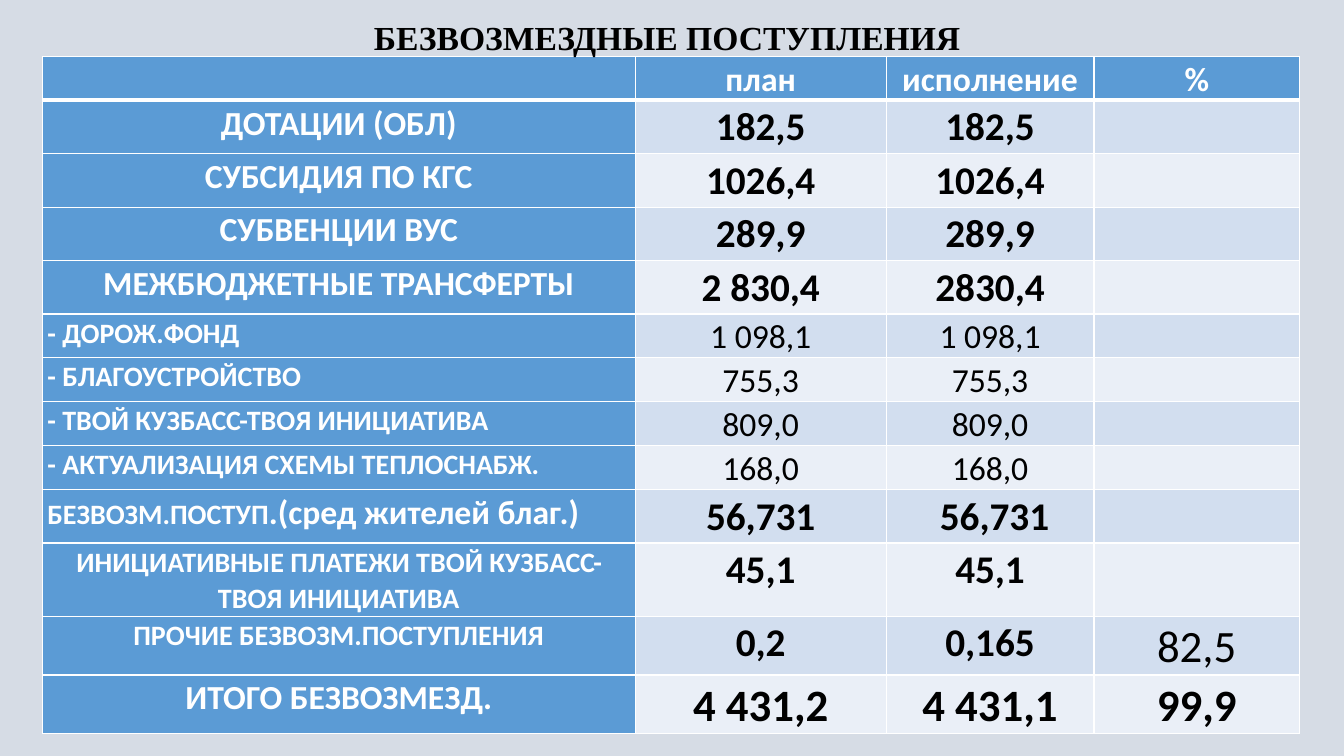
"""Build a slide with a table of gratuitous budget receipts."""
from lxml.etree import SubElement
from pptx import Presentation
from pptx.dml.color import RGBColor
from pptx.enum.text import MSO_ANCHOR, MSO_AUTO_SIZE, PP_ALIGN as Align
from pptx.oxml.ns import qn
from pptx.util import Inches, Pt

COLORS = {
    "background": "D6DCE5",
    "header": "5B9BD5",
    "odd": "D2DEEF",
    "even": "EAEFF7",
    "white": "FFFFFF",
    "black": "000000",
}
TITLE = "БЕЗВОЗМЕЗДНЫЕ ПОСТУПЛЕНИЯ "
HEADINGS = ["", "план", "исполнение", "%"]
GROUP = {"label_size": 24, "align": Align.CENTER, "size": 28, "bold": True}
DETAIL = {"label_size": 20, "align": Align.LEFT, "size": 24, "bold": False}
MIXED = {**GROUP, "label_size": 20, "align": Align.LEFT}
SMALL = {**GROUP, "label_size": 20}
TOTAL = {**GROUP, "size": 32}
ROWS = [
    (0.53, GROUP, ["ДОТАЦИИ (ОБЛ)", "182,5", "182,5", ""]),
    (0.53, GROUP, ["СУБСИДИЯ ПО КГС", "1026,4", "1026,4", ""]),
    (0.53, GROUP, ["СУБВЕНЦИИ ВУС", "289,9", "289,9", ""]),
    (0.53, GROUP, ["МЕЖБЮДЖЕТНЫЕ ТРАНСФЕРТЫ", "2 830,4", "2830,4", ""]),
    (0.4, DETAIL, ["- ДОРОЖ.ФОНД", "1 098,1", "1 098,1", ""]),
    (0.4, DETAIL, ["- БЛАГОУСТРОЙСТВО", "755,3", "755,3", ""]),
    (0.4, DETAIL, ["- ТВОЙ КУЗБАСС-ТВОЯ ИНИЦИАТИВА", "809,0", "809,0", ""]),
    (0.4, DETAIL, ["- АКТУАЛИЗАЦИЯ СХЕМЫ ТЕПЛОСНАБЖ.", "168,0", "168,0", ""]),
    (0.53, MIXED, ["БЕЗВОЗМ.ПОСТУП", "56,731", " 56,731", ""]),
    (0.65, SMALL, ["ИНИЦИАТИВНЫЕ ПЛАТЕЖИ ТВОЙ КУЗБАСС-ТВОЯ ИНИЦИАТИВА", "45,1", "45,1", ""]),
    (0.54, SMALL, ["ПРОЧИЕ БЕЗВОЗМ.ПОСТУПЛЕНИЯ", "0,2", "0,165", "82,5"]),
    (0.57, TOTAL, ["ИТОГО БЕЗВОЗМЕЗД.", "4 431,2", "4 431,1", "99,9"]),
]
LABEL_ENDING = (9, ".(сред жителей благ.)", 24)
OTHER_PERCENT = (11, 3, 32)
HEADER_HEIGHT = 0.38
COLUMN_WIDTHS = [5.88, 2.49, 2.06, 2.04]


def color(name):
    return RGBColor.from_string(COLORS[name])


def format_run(run, size, bold, color_name, font="Calibri"):
    run.font.size = Pt(size)
    run.font.bold = bold
    run.font.name = font
    run.font.color.rgb = color(color_name)


def add_borders(cell, top, bottom):
    properties = cell._tc.get_or_add_tcPr()
    for side, width in (("L", 1), ("R", 1), ("T", top), ("B", bottom)):
        line = SubElement(properties, qn(f"a:ln{side}"), w=str(Pt(width)))
        fill = SubElement(line, qn("a:solidFill"))
        SubElement(fill, qn("a:srgbClr"), val=COLORS["white"])


def fill_cell(cell, text, size, bold, align, text_color, fill_color):
    cell.margin_left = cell.margin_right = Inches(0.05)
    cell.margin_top = cell.margin_bottom = 0
    cell.fill.solid()
    cell.fill.fore_color.rgb = color(fill_color)
    if text:
        paragraph = cell.text_frame.paragraphs[0]
        paragraph.text = text
        paragraph.alignment = align
        paragraph.line_spacing = 1.07
        format_run(paragraph.runs[0], size, bold, text_color)


def add_receipts(slide):
    heights = [HEADER_HEIGHT] + [height for height, style, texts in ROWS]
    table = slide.shapes.add_table(
        len(heights), len(COLUMN_WIDTHS), Inches(0.42), Inches(0.56),
        Inches(sum(COLUMN_WIDTHS)), Inches(sum(heights))).table
    for column, width in zip(table.columns, COLUMN_WIDTHS):
        column.width = Inches(width)
    lines = [(GROUP, HEADINGS)] + [(style, texts) for height, style, texts in ROWS]
    for row, (style, texts) in enumerate(lines):
        table.rows[row].height = Inches(heights[row])
        for column, text in enumerate(texts):
            cell = table.cell(row, column)
            add_borders(cell, 3 if row == 1 else 1, 3 if row == 0 else 1)
            if row == 0 or column == 0:
                align = style["align"]
                fill_cell(cell, text, style["label_size"], True, align, "white", "header")
            else:
                band = "odd" if row % 2 else "even"
                fill_cell(cell, text, style["size"], style["bold"], Align.CENTER, "black", band)
    row, ending, size = LABEL_ENDING
    run = table.cell(row, 0).text_frame.paragraphs[0].add_run()
    run.text = ending
    format_run(run, size, True, "white")
    row, column, size = OTHER_PERCENT
    run = table.cell(row, column).text_frame.paragraphs[0].runs[0]
    format_run(run, size, False, "black")


def add_title(slide):
    box = slide.shapes.add_textbox(Inches(3.58), Inches(0.12), Inches(6.16), Inches(0.5))
    frame = box.text_frame
    frame.text = TITLE
    frame.word_wrap = False
    frame.auto_size = MSO_AUTO_SIZE.SHAPE_TO_FIT_TEXT
    frame.vertical_anchor = MSO_ANCHOR.MIDDLE
    paragraph = frame.paragraphs[0]
    paragraph.alignment = Align.CENTER
    format_run(paragraph.runs[0], 24, True, "black", "Times New Roman")


def main():
    presentation = Presentation()
    presentation.slide_width = Inches(13.33)
    presentation.slide_height = Inches(7.5)
    slide = presentation.slides.add_slide(presentation.slide_layouts[6])
    slide.background.fill.solid()
    slide.background.fill.fore_color.rgb = color("background")
    add_receipts(slide)
    add_title(slide)
    presentation.save("out.pptx")


if __name__ == "__main__":
    main()
